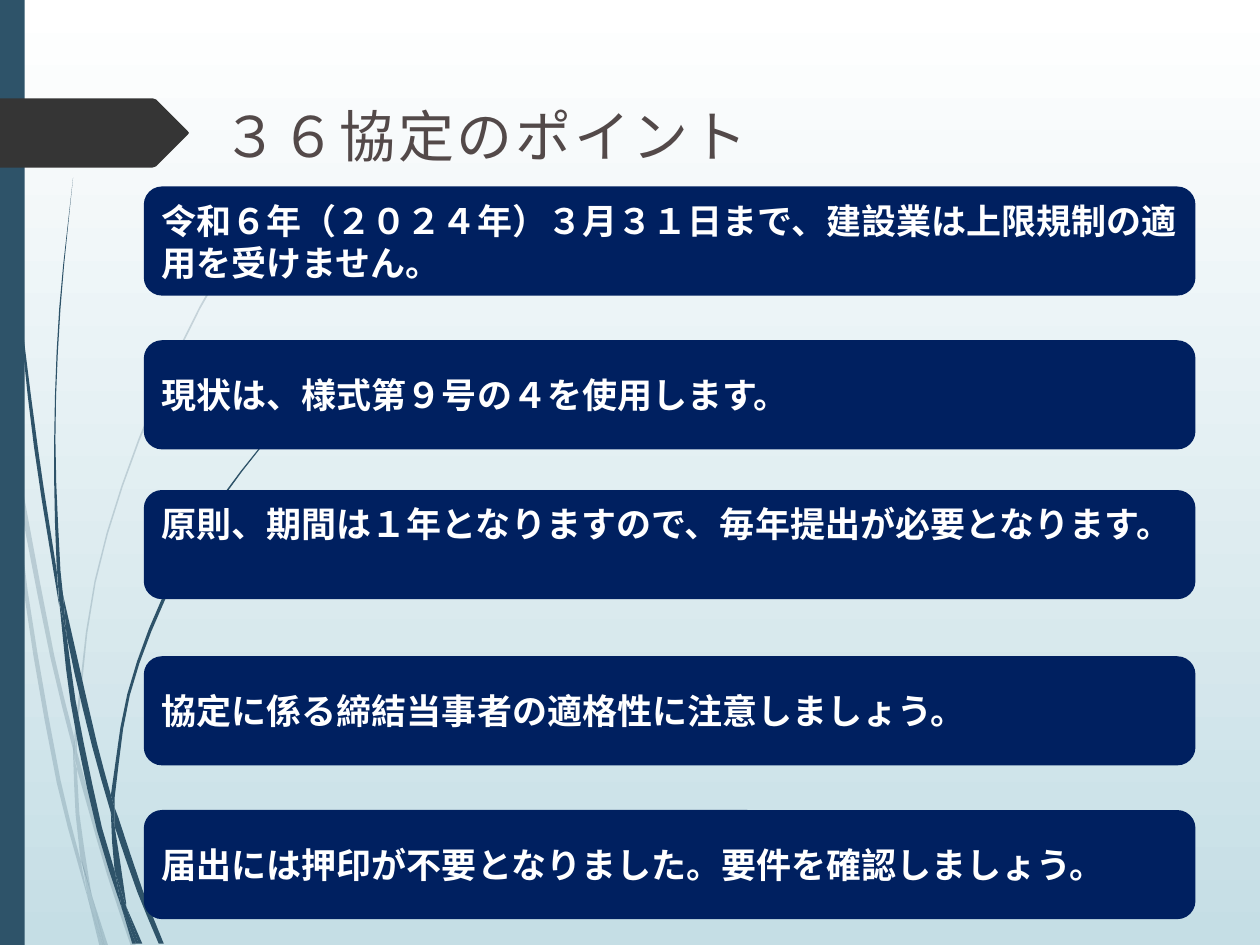
from dataclasses import dataclass
from math import dist

from lxml.etree import SubElement
from pptx import Presentation
from pptx.dml.color import RGBColor
from pptx.enum.shapes import MSO_SHAPE
from pptx.enum.text import MSO_ANCHOR, MSO_AUTO_SIZE, PP_ALIGN
from pptx.oxml.ns import qn
from pptx.util import Cm, Pt

Point = tuple[float, float]
TEAL, CHARCOAL, NAVY, WHITE = "2E5369", "353535", "002060", "FFFFFF"
IN = 2.54  # outline points below are in inches


@dataclass
class Strand:
    """A blade of grass: one edge out, the other edge back."""
    out: list[Point]
    back: list[Point]


@dataclass
class Box:
    top: float
    text: str


PALE_STRANDS = [
    Strand([(.08, 3.5), (.06, 3.22), (0, 2.82)],
           [(0, 2.99), (.07, 3.44)]),
    Strand([(.1, 3.45), (.12, 3.76), (.4, 5.22), (.59, 5.99)],
           [(.59, 5.86), (.43, 5.2), (.1, 3.45)]),
    Strand([(.61, 6.1), (.85, 6.94), (1.04, 7.51)],
           [(1.08, 7.51), (.88, 6.92), (.64, 6.07), (.61, 5.96)]),
    Strand([(.73, 7.11), (.83, 7.51)], [(.86, 7.51)]),
    Strand([(.08, 3.5), (.19, 4.7), (.45, 6.21), (.64, 6.93), (.7, 7.14)],
           [(.64, 6.83), (.48, 6.19), (.22, 4.69), (.12, 3.76), (.08, 3.5)]),
    Strand([(.58, 5.99), (.6, 6.46), (.64, 6.83), (.73, 7.11)],
           [(.72, 7.06), (.63, 6.46), (.61, 6.1), (.58, 5.99)]),
    Strand([(.61, 5.96), (.61, 5.84), (.76, 4.62), (1.11, 3.49), (1.59, 2.45),
            (1.87, 1.98), (2.01, 1.75), (2.17, 1.54)],
           [(2.17, 1.53), (2.01, 1.75), (1.86, 1.97), (1.58, 2.44), (1.1, 3.48),
            (.75, 4.61), (.59, 5.84)]),
    Strand([(.7, 7.14), (.79, 7.51)], [(.82, 7.51)]),
    Strand([(.61, 6.08), (.61, 5.96)], [(.59, 5.86), (.58, 5.99)]),
    Strand([(.65, 6.83), (.7, 7.14), (.82, 7.51)],
           [(.83, 7.51), (.73, 7.11), (.65, 6.83)]),
]
DARK_STRANDS = [
    Strand([(.02, 0), (.05, 1.1), (.14, 2.33), (.27, 3.55), (.47, 4.81)],
           [(.45, 4.53), (.3, 3.55), (.15, 2.32), (.06, 1.09), (.03, 0)]),
    Strand([(.5, 4.72), (.53, 5.05), (.73, 5.92), (.88, 6.45)],
           [(.88, 6.31), (.77, 5.9), (.5, 4.72)]),
    Strand([(.91, 6.56), (1.09, 7.08), (1.26, 7.49)],
           [(1.3, 7.49), (1.13, 7.06), (.94, 6.49), (.91, 6.41)]),
    Strand([(.47, 4.77), (.56, 5.57), (.77, 6.59), (.97, 7.22)],
           [(.91, 6.91), (.81, 6.57), (.6, 5.56), (.53, 5.05), (.47, 4.77)]),
    Strand([(.5, 4.72), (.48, 4.53), (.44, 3.49), (.48, 2.45), (.58, 1.41)],
           [(.58, 1.41), (.47, 2.45), (.43, 3.49), (.45, 4.49), (.49, 4.72)]),
    Strand([(1, 7.19), (1.1, 7.49)], [(1.13, 7.49)]),
    Strand([(.47, 4.77), (.53, 5.05)], [(.5, 4.72), (.45, 4.49)]),
    Strand([(.91, 6.41), (.91, 6.33), (1.03, 5.52), (1.31, 4.76), (1.69, 4.06),
            (2.16, 3.44)],
           [(2.15, 3.44), (1.68, 4.05), (1.29, 4.74), (1.01, 5.51), (.88, 6.31)]),
    Strand([(.97, 7.22), (1.05, 7.49)], [(1.08, 7.49)]),
    Strand([(.88, 6.45), (.91, 6.91), (1, 7.19)],
           [(1, 7.16), (.91, 6.56), (.88, 6.45)]),
    Strand([(.88, 6.45), (.91, 6.56)], [(.91, 6.41), (.88, 6.31)]),
    Strand([(.91, 6.91), (.97, 7.22), (1.08, 7.49)],
           [(1.1, 7.49), (1, 7.19), (.91, 6.91)]),
]
ARROW = [(0, .78), (1.21, .78), (1.24, .79), (1.49, 1.04), (1.5, 1.055),
         (1.49, 1.07), (1.24, 1.32), (1.21, 1.33), (0, 1.33)]
BOXES = [
    Box(3.76, "令和６年（２０２４年）３月３１日まで、建設業は上限規制の適用を受けません。　"),
    Box(6.86, "現状は、様式第９号の４を使用します。　"),
    Box(9.88, "原則、期間は１年となりますので、毎年提出が必要となります。　"),
    Box(13.23, "協定に係る締結当事者の適格性に注意しましょう。　"),
    Box(16.33, "届出には押印が不要となりました。要件を確認しましょう。"),
]


def rgb(color: str) -> RGBColor:
    return RGBColor.from_string(color)


def paint(sp, color: str, alpha: int = 100) -> None:
    sp.shadow.inherit = False
    sp.fill.solid()
    sp.fill.fore_color.rgb = rgb(color)
    sp.line.fill.background()
    if alpha < 100:
        clr = sp.fill._xPr.find(qn("a:solidFill"))[0]
        SubElement(clr, qn("a:alpha"), val=str(alpha * 1000))


def smooth(pts: list[Point]) -> list[Point]:
    """Hermite curve through the points; longer spans get more steps."""
    def tangent(i: int) -> Point:
        a, b = max(i - 1, 0), min(i + 1, len(pts) - 1)
        length = sum(dist(pts[j], pts[j + 1]) for j in range(a, b))
        return tuple((q - p) / length for p, q in zip(pts[a], pts[b]))

    curve = [pts[0]]
    for i, (p, q) in enumerate(zip(pts, pts[1:])):
        d, m, n = dist(p, q), tangent(i), tangent(i + 1)
        steps = min(1 + int(d * 2.5), 3)
        for t in (k / steps for k in range(1, steps + 1)):
            h = t * t * (3 - 2 * t)
            u, v = d * t * (1 - t) ** 2, d * t * t * (t - 1)
            curve.append(tuple(p[k] * (1 - h) + q[k] * h + u * m[k] + v * n[k]
                               for k in (0, 1)))
    return curve


def add_outline(shapes, pts: list[Point], color: str, alpha: int = 100) -> None:
    emu = [(Cm(x * IN), Cm(y * IN)) for x, y in pts]
    builder = shapes.build_freeform(*emu[0])
    builder.add_line_segments(emu[1:], close=True)
    paint(builder.convert_to_shape(), color, alpha)


def add_strands(s, strands: list[Strand], alpha: int) -> None:
    group = s.shapes.add_group_shape()
    for strand in strands:
        add_outline(group.shapes, smooth(strand.out) + smooth(strand.back), TEAL, alpha)


def add_run(p, text: str, font: str, size: int, color: str, bold: bool = False):
    r = p.add_run()
    r.text = text
    r.font.name, r.font.size, r.font.bold = font, Pt(size), bold
    r.font.color.rgb = rgb(color)
    return r


def add_box(s, box: Box) -> None:
    sp = s.shapes.add_shape(MSO_SHAPE.ROUNDED_RECTANGLE, Cm(2.9), Cm(box.top), Cm(21.2), Cm(2.2))
    paint(sp, NAVY)
    tf = sp.text_frame
    tf.word_wrap, tf.vertical_anchor = True, MSO_ANCHOR.MIDDLE
    p = tf.paragraphs[0]
    p.alignment = PP_ALIGN.LEFT
    add_run(p, box.text, "Quicksand", 20, WHITE, bold=True)


def main() -> None:
    prs = Presentation()
    prs.slide_width, prs.slide_height = Cm(25.4), Cm(19.05)
    s = prs.slides.add_slide(prs.slide_layouts[6])

    # Background, white at the top
    bg = s.background.fill
    bg.gradient()
    bg.gradient_angle = 270
    for stop, color in zip(bg.gradient_stops, (WHITE, "C5DEE5")):
        stop.color.rgb = rgb(color)

    # Grass, side bar and title arrow
    add_strands(s, PALE_STRANDS, 20)
    add_strands(s, DARK_STRANDS, 100)
    paint(s.shapes.add_shape(MSO_SHAPE.RECTANGLE, 0, 0, Cm(0.5), prs.slide_height), TEAL)
    add_outline(s.shapes, ARROW, CHARCOAL)

    # Title
    tf = s.shapes.add_textbox(Cm(4.1), Cm(1.93), Cm(18.36), Cm(1.63)).text_frame
    tf.word_wrap, tf.auto_size = True, MSO_AUTO_SIZE.SHAPE_TO_FIT_TEXT
    p = tf.paragraphs[0]
    p._p.get_or_add_pPr().set("marL", str(Cm(0.13)))
    r = add_run(p, "３６協定のポイント", "Roboto", 32, "534949")
    r.font._element.set("spc", "150")

    # Key points
    for box in BOXES:
        add_box(s, box)

    prs.save("out.pptx")


if __name__ == "__main__":
    main()
